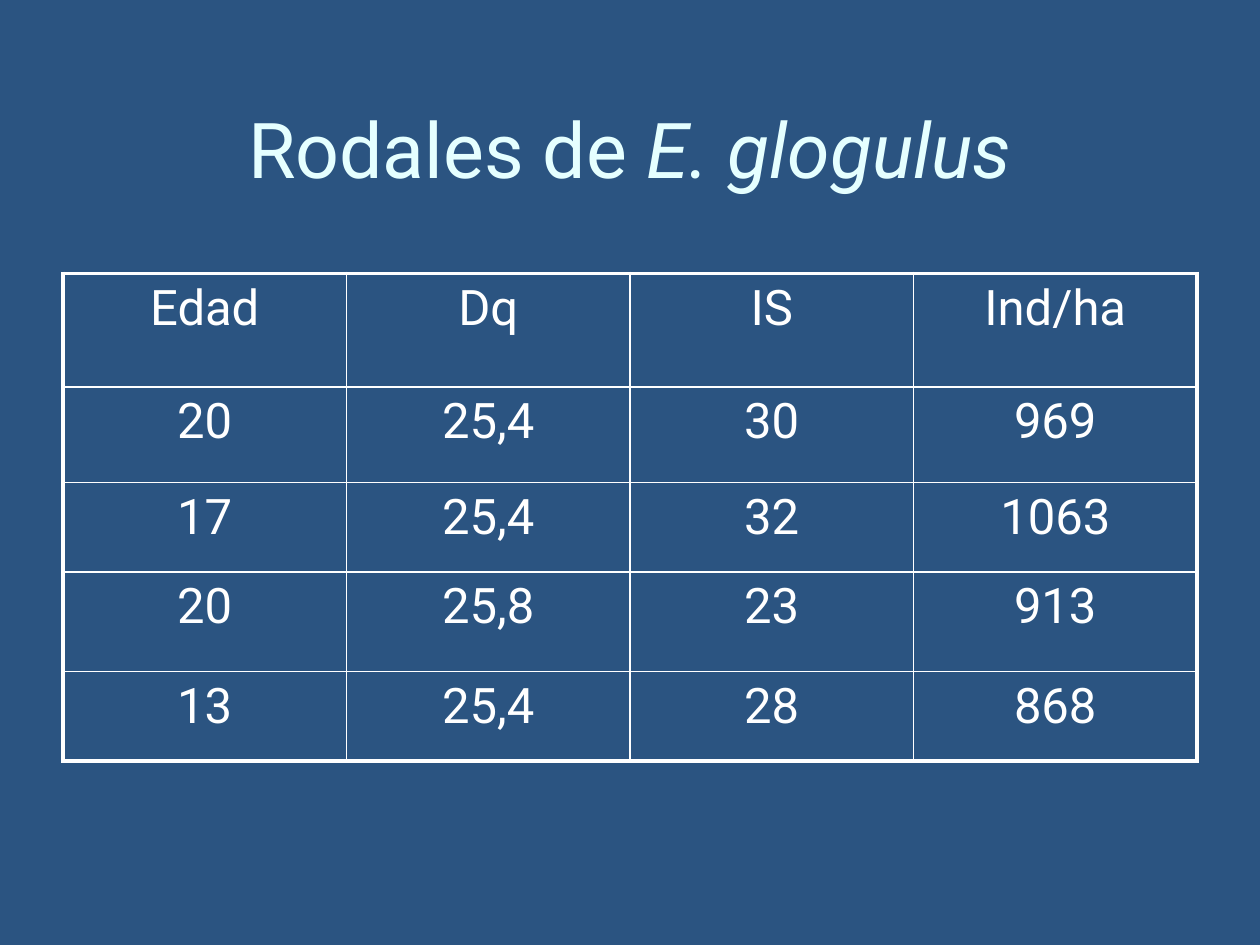
from lxml.etree import SubElement
from pptx import Presentation
from pptx.dml.color import RGBColor
from pptx.enum.text import MSO_ANCHOR, PP_ALIGN
from pptx.oxml.ns import qn
from pptx.util import Inches, Pt

BLUE = RGBColor(0x2B, 0x54, 0x81)
ICE = RGBColor(0xE5, 0xFF, 0xFF)
WHITE = RGBColor(0xFF, 0xFF, 0xFF)

TITLE_FORMAT = {"name": "Roboto", "size": Pt(44), "color": ICE}
CELL_FORMAT = {"name": "Roboto", "size": Pt(28), "color": WHITE}
OUTER_WIDTH = Pt(2.25)
INNER_WIDTH = Pt(1)
ROW_HEIGHTS = [0.9, 0.76, 0.71, 0.79, 0.71]
STANDS = [
    ["Edad", "Dq", "IS", "Ind/ha"],
    ["20", "25,4", "30", "969"],
    ["17", "25,4", "32", "1063"],
    ["20", "25,8", "23", "913"],
    ["13", "25,4", "28", "868"],
]


def add_run(paragraph, text, formats):
    run = paragraph.add_run()
    run.text = text
    for name, value in formats.items():
        if name == "color":
            run.font.color.rgb = value
        else:
            setattr(run.font, name, value)


def add_border(cell, side, width):
    properties = cell._tc.get_or_add_tcPr()
    line = SubElement(properties, qn(f"a:ln{side}"), w=str(int(width)))
    fill = SubElement(line, qn("a:solidFill"))
    SubElement(fill, qn("a:srgbClr"), val=str(WHITE))


def add_title(slide, left, top, width, height):
    shape = slide.shapes.add_textbox(
        Inches(left), Inches(top), Inches(width), Inches(height))
    frame = shape.text_frame
    for name, value in {"word_wrap": True, "vertical_anchor": MSO_ANCHOR.MIDDLE}.items():
        setattr(frame, name, value)
    paragraph = frame.paragraphs[0]
    paragraph.alignment = PP_ALIGN.CENTER
    add_run(paragraph, "Rodales de ", TITLE_FORMAT)
    add_run(paragraph, "E. glogulus", {**TITLE_FORMAT, "italic": True})


def add_stand_table(slide, left, top, width):
    row_count, column_count = len(STANDS), len(STANDS[0])
    table = slide.shapes.add_table(
        row_count, column_count, Inches(left), Inches(top),
        Inches(width), Inches(sum(ROW_HEIGHTS))).table
    for name in ("first_row", "horz_banding"):
        setattr(table, name, False)
    for column in table.columns:
        column.width = Inches(width / column_count)
    for row_index, (values, height) in enumerate(zip(STANDS, ROW_HEIGHTS)):
        table.rows[row_index].height = Inches(height)
        for column_index, text in enumerate(values):
            cell = table.cell(row_index, column_index)
            outer_sides = {
                "L": column_index == 0,
                "R": column_index == column_count - 1,
                "T": row_index == 0,
                "B": row_index == row_count - 1,
            }
            for side, outer in outer_sides.items():
                add_border(cell, side, OUTER_WIDTH if outer else INNER_WIDTH)
            cell.fill.background()
            paragraph = cell.text_frame.paragraphs[0]
            paragraph.alignment = PP_ALIGN.CENTER
            add_run(paragraph, text, CELL_FORMAT)


def main():
    presentation = Presentation()
    presentation.slide_width = Inches(10)
    presentation.slide_height = Inches(7.5)
    slide = presentation.slides.add_slide(presentation.slide_layouts[6])
    background = slide.background.fill
    background.solid()
    background.fore_color.rgb = BLUE
    add_title(slide, 0.5, 0.42, 9, 1.5)
    add_stand_table(slide, 0.5, 2.17, 9)
    presentation.save("out.pptx")


if __name__ == "__main__":
    main()
